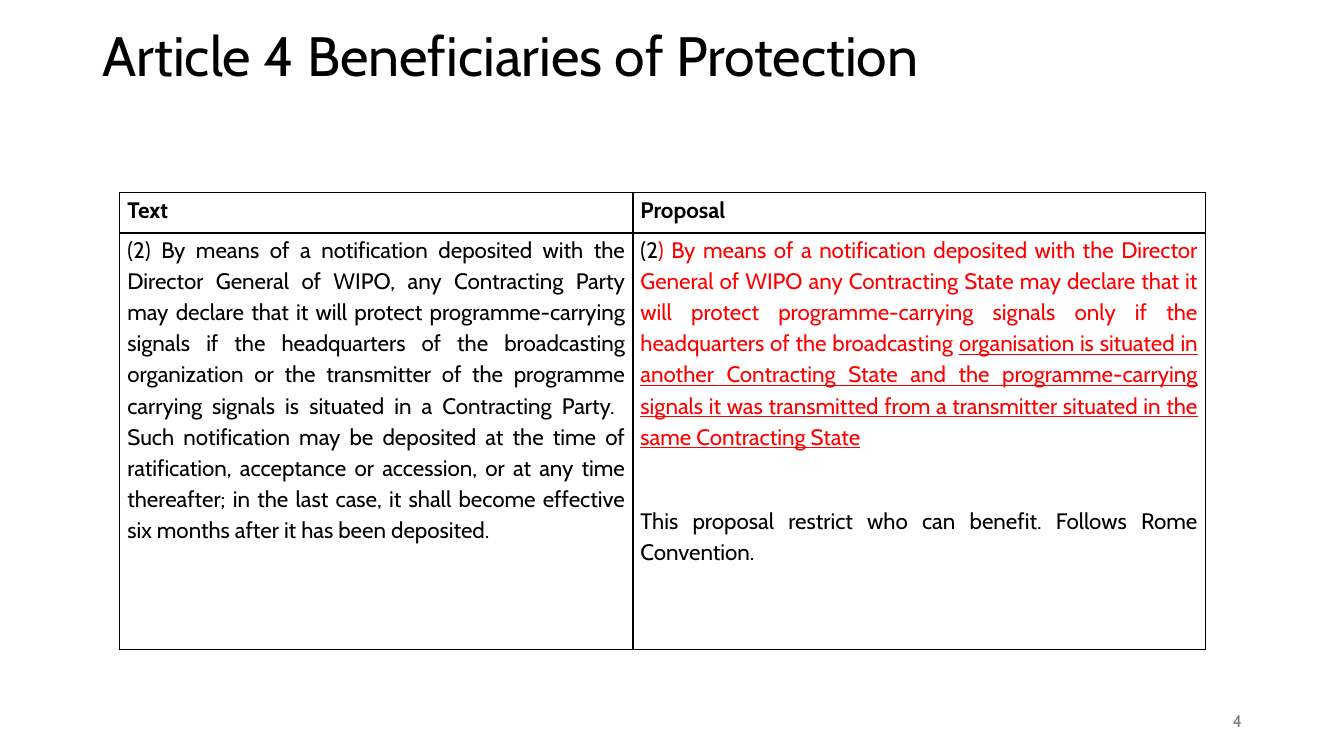
from lxml.etree import SubElement
from pptx import Presentation
from pptx.dml.color import RGBColor
from pptx.enum.text import MSO_ANCHOR, PP_ALIGN
from pptx.oxml.ns import qn
from pptx.util import Cm, Pt

FONT = "Cabin"
BLACK, RED, GREY = "000000", "FF0000", "797979"
TITLE = "Article 4 Beneficiaries of Protection"
PAGE_NUMBER = "4"
HEADINGS = ["Text", "Proposal"]

# Each cell is a list of paragraphs; each paragraph a list of (text, colour, underlined)
CURRENT_TEXT = [[(
    "(2) By means of a notification deposited with the Director General of WIPO, "
    "any Contracting Party may declare that it will protect programme-carrying "
    "signals if the headquarters of the broadcasting organization or the transmitter "
    "of the programme carrying signals is situated in a Contracting Party.  "
    "Such notification may be deposited at the time of ratification, acceptance or "
    "accession, or at any time thereafter; in the last case, it shall become "
    "effective six months after it has been deposited.", BLACK, False)]]
PROPOSAL = [
    [("(2", BLACK, False),
     (") By means of a notification deposited with the Director General of WIPO any "
      "Contracting State may declare that it will protect programme-carrying signals "
      "only if the headquarters of the broadcasting ", RED, False),
     ("organisation is situated in another Contracting State and the "
      "programme-carrying signals it was transmitted from a transmitter situated in "
      "the same Contracting State", RED, True)],
    [("This proposal restrict who can benefit. Follows Rome Convention.", BLACK, False)],
]
COLUMN_WIDTHS = [Cm(12.93), Cm(14.43)]
ROW_HEIGHTS = [Cm(1.02), Cm(10.49)]
PARAGRAPH_GAP = Pt(38)


def add_span(para, text, size, color=BLACK, bold=False, underline=False):
    span = para.add_run()
    span.text = text
    font = span.font
    font.name, font.size = FONT, Pt(size)
    font.bold, font.underline = bold, underline
    font.color.rgb = RGBColor.from_string(color)


def place(box, left, top, width, height):
    box.left, box.top, box.width, box.height = Cm(left), Cm(top), Cm(width), Cm(height)


def outline_cell(cell):
    properties = cell._tc.get_or_add_tcPr()
    for side in ("a:lnL", "a:lnR", "a:lnT", "a:lnB"):
        line = SubElement(properties, qn(side), w=str(Pt(1)))
        fill = SubElement(line, qn("a:solidFill"))
        SubElement(fill, qn("a:srgbClr"), val=BLACK)


def fill_cell(cell, paragraphs, align, bold):
    cell.margin_left = cell.margin_right = Cm(0.19)
    cell.margin_top = cell.margin_bottom = 0
    outline_cell(cell)
    cell.fill.background()
    frame = cell.text_frame
    for index, spans in enumerate(paragraphs):
        para = frame.add_paragraph() if index else frame.paragraphs[0]
        para.alignment = align
        para.line_spacing = 1.15
        is_last = index == len(paragraphs) - 1
        para.space_after = Pt(8) if is_last else PARAGRAPH_GAP
        for text, color, underline in spans:
            add_span(para, text, 16, color, bold, underline)


def add_title(page):
    title = page.shapes.title
    place(title, 2.33, 1.02, 29.21, 2.57)
    title.text_frame.vertical_anchor = MSO_ANCHOR.MIDDLE
    para = title.text_frame.paragraphs[0]
    para.alignment = PP_ALIGN.LEFT
    para.line_spacing = 0.9
    add_span(para, TITLE, 39.6)
    para.add_line_break()
    para.font.size = Pt(39.6)


def add_comparison(page):
    table = page.shapes.add_table(2, 2, Cm(3.02), Cm(4.85),
                                  sum(COLUMN_WIDTHS), sum(ROW_HEIGHTS)).table
    table.first_row = table.horz_banding = False
    for row, height in zip(table.rows, ROW_HEIGHTS):
        row.height = height
    for index, body in enumerate([CURRENT_TEXT, PROPOSAL]):
        table.columns[index].width = COLUMN_WIDTHS[index]
        heading = [[(HEADINGS[index], BLACK, False)]]
        fill_cell(table.cell(0, index), heading, PP_ALIGN.LEFT, True)
        fill_cell(table.cell(1, index), body, PP_ALIGN.JUSTIFY, False)


def add_page_number(page):
    box = page.shapes.add_textbox(Cm(23.93), Cm(17.65), Cm(7.62), Cm(1.02))
    frame = box.text_frame
    frame.word_wrap = True
    frame.vertical_anchor = MSO_ANCHOR.MIDDLE
    para = frame.paragraphs[0]
    para.alignment = PP_ALIGN.RIGHT
    add_span(para, PAGE_NUMBER, 12, GREY)


def main():
    deck = Presentation()
    deck.slide_width, deck.slide_height = Cm(33.87), Cm(19.05)
    page = deck.slides.add_slide(deck.slide_layouts[5])
    add_title(page)
    add_comparison(page)
    add_page_number(page)
    deck.save("out.pptx")


if __name__ == "__main__":
    main()
